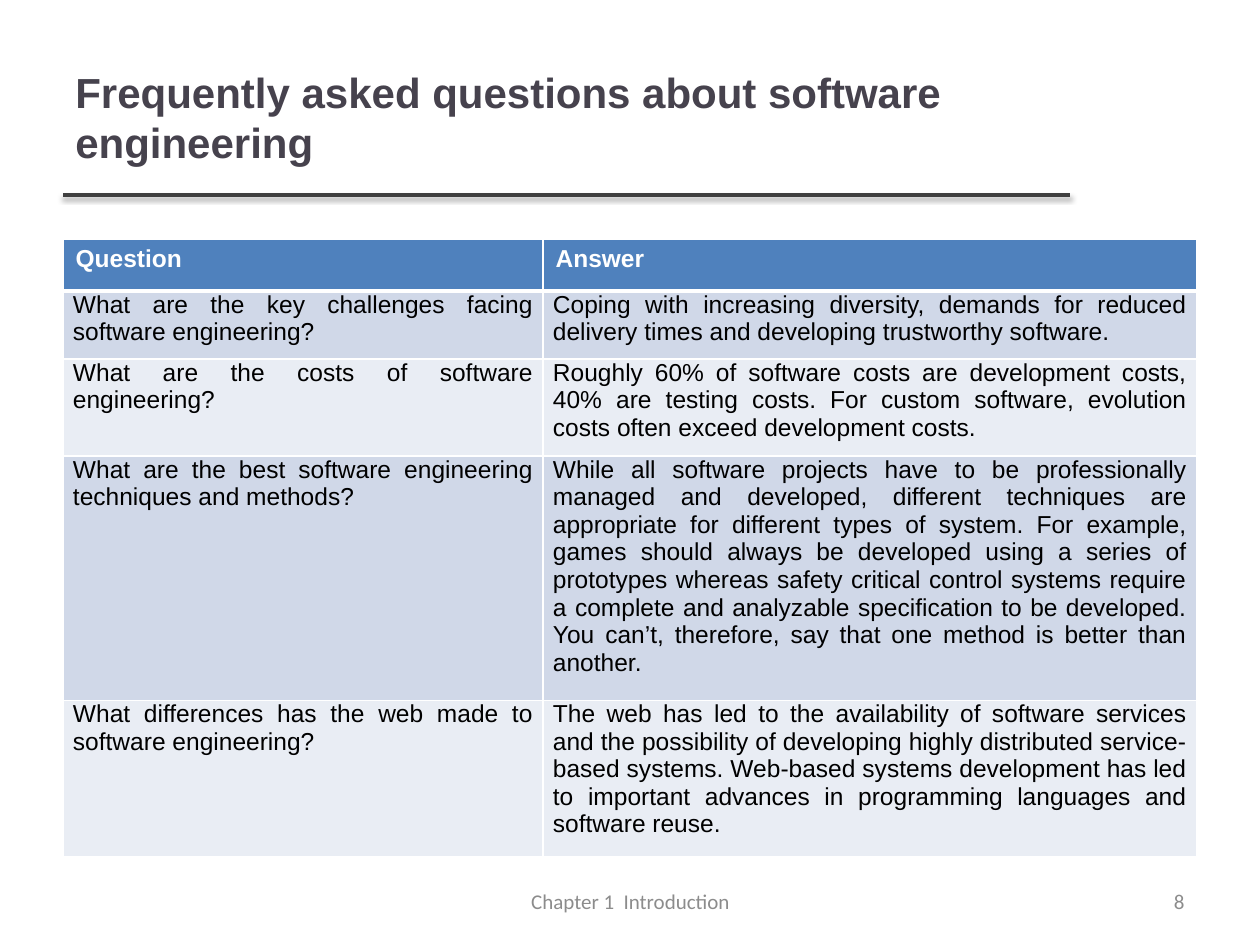
from lxml.etree import SubElement
from pptx import Presentation
from pptx.dml.color import RGBColor
from pptx.enum.shapes import MSO_CONNECTOR
from pptx.enum.text import MSO_ANCHOR, PP_ALIGN
from pptx.oxml import parse_xml
from pptx.oxml.ns import nsdecls, qn
from pptx.util import Pt

EMU_PER_INCH = 914400
PX_PER_INCH = 126

QUESTIONS = [
    ("What are the key challenges facing software engineering?",
     "Coping with increasing diversity, demands for reduced delivery times "
     "and developing trustworthy software."),
    ("What are the costs of software engineering?",
     "Roughly 60% of software costs are development costs, 40% are testing "
     "costs. For custom software, evolution costs often exceed development costs."),
    ("What are the best software engineering techniques and methods?",
     "While all software projects have to be professionally managed and "
     "developed, different techniques are appropriate for different types of "
     "system. For example, games should always be developed using a series of "
     "prototypes whereas safety critical control systems require a complete "
     "and analyzable specification to be developed. You can’t, therefore, say "
     "that one method is better than another."),
    ("What differences has the web made to software engineering?",
     "The web has led to the availability of software services and the "
     "possibility of developing highly distributed service-based systems. "
     "Web-based systems development has led to important advances in "
     "programming languages and software reuse."),
]


def px(length):
    return round(length * EMU_PER_INCH / PX_PER_INCH)


def color(value):
    return RGBColor.from_string(value)


class FaqSlide:
    heading_font = "Arial"
    footer_font = "Calibri"
    title_color = "46424D"
    rule_color = "404040"
    footer_color = "8C8C8C"
    header_fill = "4F81BD"
    band_fills = ("D0D8E8", "E9EDF4")
    border_color = "FFFFFF"

    def __init__(self, deck):
        self.slide = deck.slides.add_slide(deck.slide_layouts[6])

    def style(self, paragraph, size, font, ink, bold=False, align=PP_ALIGN.LEFT):
        paragraph.alignment = align
        paragraph.font.size = Pt(size)
        paragraph.font.name = font
        paragraph.font.bold = bold
        paragraph.font.color.rgb = color(ink)

    def text(self, box, words, *look, **options):
        frame = self.slide.shapes.add_textbox(*map(px, box)).text_frame
        frame.word_wrap = True
        frame.vertical_anchor = MSO_ANCHOR.MIDDLE
        frame.text = words
        self.style(frame.paragraphs[0], *look, **options)

    def title(self, box, words):
        self.text(box, words, 24, self.heading_font, self.title_color, bold=True)

    def footer(self, box, words, align):
        self.text(box, words, 12, self.footer_font, self.footer_color, align=align)

    def rule(self, left, right, y):
        rule = self.slide.shapes.add_connector(
            MSO_CONNECTOR.STRAIGHT, px(left), px(y), px(right), px(y))
        rule.line.color.rgb = color(self.rule_color)
        rule.line.width = Pt(2)
        rule._element.spPr.append(parse_xml(
            f'<a:effectLst {nsdecls("a")}>'
            '<a:outerShdw blurRad="40000" dist="20000" dir="5400000" rotWithShape="0">'
            '<a:srgbClr val="000000"><a:alpha val="38000"/></a:srgbClr>'
            '</a:outerShdw></a:effectLst>'))

    def borders(self, cell, **widths):
        properties = cell._tc.get_or_add_tcPr()
        for side in "LRTB":
            edge = SubElement(properties, qn(f"a:ln{side}"),
                              w=str(Pt(widths.get(side, 1))))
            fill = SubElement(edge, qn("a:solidFill"))
            SubElement(fill, qn("a:srgbClr"), val=self.border_color)

    def cell(self, cell, words, fill, ink, bold, align, **widths):
        self.borders(cell, **widths)
        cell.fill.solid()
        cell.fill.fore_color.rgb = color(fill)
        cell.text = words
        self.style(cell.text_frame.paragraphs[0], 14, self.heading_font, ink, bold, align)

    def table(self, left, top, widths, heights, header, body):
        table = self.slide.shapes.add_table(
            len(heights), len(widths), px(left), px(top),
            px(sum(widths)), px(sum(heights))).table
        table.horz_banding = False
        for column, width in zip(table.columns, widths):
            column.width = px(width)
        for row, height in zip(table.rows, heights):
            row.height = px(height)
        for cell, words in zip(table.rows[0].cells, header):
            self.cell(cell, words, self.header_fill, "FFFFFF", True, PP_ALIGN.LEFT, B=3)
        for index, entry in enumerate(body):
            top_width = 1 if index else 3
            for cell, words in zip(table.rows[index + 1].cells, entry):
                self.cell(cell, words, self.band_fills[index % 2], "000000", False,
                          PP_ALIGN.JUSTIFY, T=top_width)
                cell.margin_left = cell.margin_right = px(10)
                cell.margin_top = 0
                cell.margin_bottom = px(9)


def main():
    deck = Presentation()
    deck.slide_width = px(1260)
    deck.slide_height = px(945)
    faq = FaqSlide(deck)
    faq.rule(63, 1070, 195)
    faq.title((63, 38, 1006, 157), "Frequently asked questions about software engineering")
    faq.table(63, 239, (480, 654), (52, 63, 93, 229, 147), ("Question", "Answer"), QUESTIONS)
    faq.footer((431, 876, 399, 50), "Chapter 1  Introduction", PP_ALIGN.CENTER)
    faq.footer((903, 876, 294, 50), "8", PP_ALIGN.RIGHT)
    deck.save("out.pptx")


if __name__ == "__main__":
    main()
